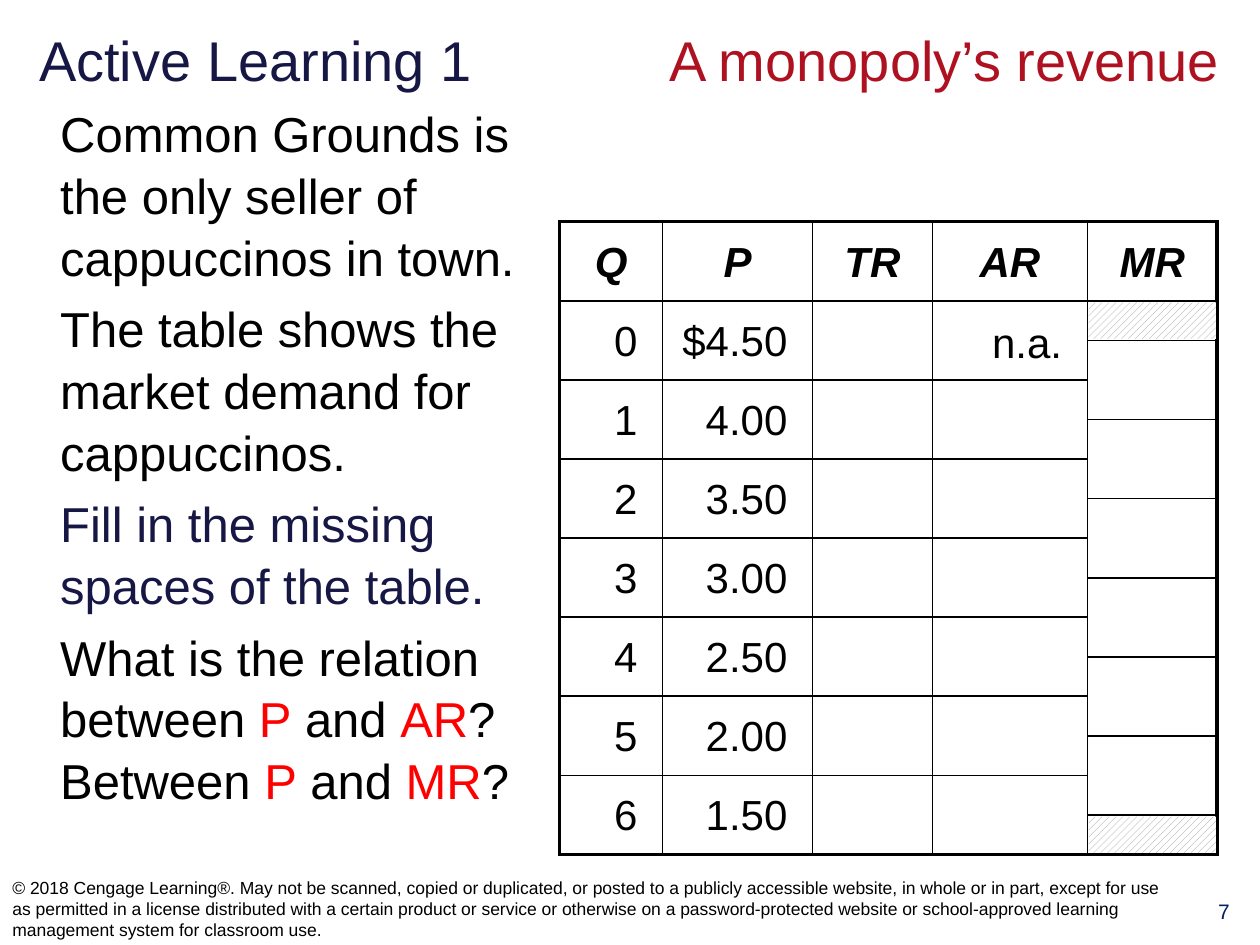
from dataclasses import dataclass
from itertools import accumulate
from typing import NamedTuple

from lxml.etree import SubElement
from pptx import Presentation
from pptx.dml.color import RGBColor
from pptx.enum.dml import MSO_PATTERN
from pptx.enum.shapes import MSO_SHAPE
from pptx.enum.text import MSO_ANCHOR as Anchor, PP_ALIGN as Align
from pptx.oxml.ns import qn
from pptx.util import Inches, Pt

WIDTH, HEIGHT = Inches(10), Inches(7.5)
FONT = "Arial"
BLACK, WHITE, NAVY, CRIMSON, RED = "000000", "FFFFFF", "171745", "AE1221", "FF0000"
DEEP_BLUE, GREY = "002060", "969696"
THIN, THICK = 1, 2.25

TABLE_LEFT, TABLE_TOP, ROW = 44.4, 23.47, 8.37
COLUMNS = [8.2, 11.9, 9.5, 12.3, 10.3]
EDGES = list(accumulate(COLUMNS, initial=TABLE_LEFT))
HEADINGS = ["Q", "P", "TR", "AR", "MR"]
PRICES = ["$4.50", "4.00", "3.50", "3.00", "2.50", "2.00", "1.50"]
ROWS = len(PRICES) + 1


class Area(NamedTuple):
    """Shares of the slide's size, in percent."""
    left: float
    top: float
    width: float
    height: float

    def lengths(self) -> tuple[int, int, int, int]:
        return (across(self.left), down(self.top), across(self.width), down(self.height))


class Span(NamedTuple):
    text: str
    color: str = BLACK


@dataclass
class Style:
    size: float
    align: Align = Align.LEFT
    bold: bool = False
    spacing: float = 1.0
    before: float = 0


@dataclass
class Block:
    area: Area
    paragraphs: list[list[Span]]
    style: Style
    anchor: Anchor = Anchor.TOP
    inset_left: float = 0.1
    inset_right: float = 0.1
    tabs: tuple[float, ...] = ()


HEADING = Style(24, Align.CENTER, bold=True, spacing=1.05)
NUMBER = Style(24, Align.RIGHT, spacing=1.05)

BLOCKS = [
    Block(Area(1.7, 1.47, 96.7, 9.6),
          [[Span("Active Learning 1\t\t", NAVY), Span("A monopoly’s revenue", CRIMSON)]],
          Style(32), Anchor.MIDDLE, inset_left=0.14, tabs=(40, 50)),
    Block(Area(3.8, 10, 40.6, 84),
          [[Span("Common Grounds is the only seller of cappuccinos in town.")],
           [Span("The table shows the market demand for cappuccinos.")],
           [Span("Fill in the missing spaces of the table.", NAVY)],
           [Span("What is the relation between "), Span("P", RED), Span(" and "),
            Span("AR", RED), Span("? Between "), Span("P", RED), Span(" and "),
            Span("MR", RED), Span("?")]],
          Style(28, spacing=1.05, before=5.6)),
    Block(Area(94.3, 94.4, 5.7, 5.47), [[Span("7", DEEP_BLUE)]], Style(12, Align.CENTER)),
    Block(Area(0, 92.27, 94.1, 7.73),
          [[Span("© 2018 Cengage Learning®. May not be scanned, copied or duplicated, or posted "
                 "to a publicly accessible website, in whole or in part, except for use as "
                 "permitted in a license distributed with a certain product or service or "
                 "otherwise on a password-protected website or school-approved learning "
                 "management system for classroom use.")]],
          Style(10), Anchor.MIDDLE),
]
NOT_APPLICABLE = Block(Area(EDGES[3], TABLE_TOP + ROW, COLUMNS[3], ROW),
                       [[Span("n.a.")]], NUMBER, Anchor.MIDDLE, inset_right=0.2)


def across(percent: float) -> int:
    return int(WIDTH * percent / 100)


def down(percent: float) -> int:
    return int(HEIGHT * percent / 100)


def rgb(color: str) -> RGBColor:
    return RGBColor.from_string(color)


def write(para, spans: list[Span], style: Style, first: bool = True,
          tabs: tuple[float, ...] = ()) -> None:
    para.alignment = style.align
    para.line_spacing = style.spacing
    para.space_before = Pt(0 if first else style.before)
    if tabs:
        tab_list = SubElement(para._p.get_or_add_pPr(), qn("a:tabLst"))
        for stop in tabs:
            SubElement(tab_list, qn("a:tab"), pos=str(across(stop)), algn="l")
    para.font.name = FONT
    para.font.size = Pt(style.size)
    para.font.bold = para.font.italic = style.bold
    for span in spans:
        run = para.add_run()
        run.text = span.text
        run.font.color.rgb = rgb(span.color)


def draw_block(page, block: Block) -> None:
    frame = page.shapes.add_textbox(*block.area.lengths()).text_frame
    frame.word_wrap = True
    frame.vertical_anchor = block.anchor
    frame.margin_left, frame.margin_right = Inches(block.inset_left), Inches(block.inset_right)
    for index, spans in enumerate(block.paragraphs):
        para = frame.add_paragraph() if index else frame.paragraphs[0]
        write(para, spans, block.style, index == 0, block.tabs)


def set_borders(cell, row: int, column: int) -> None:
    outer = {"L": column == 0, "R": column == len(COLUMNS) - 1,
             "T": row == 0, "B": row == ROWS - 1}
    properties = cell._tc.get_or_add_tcPr()
    for index, (side, is_outer) in enumerate(outer.items()):
        weight = Pt(THICK if is_outer else THIN)
        line = SubElement(properties, qn(f"a:ln{side}"), w=str(int(weight)))
        SubElement(SubElement(line, qn("a:solidFill")), qn("a:srgbClr"), val=BLACK)
        properties.insert(index, line)


def fill_cell(cell, row: int, column: int) -> None:
    cell.fill.background()
    set_borders(cell, row, column)
    cell.vertical_anchor = Anchor.MIDDLE
    para = cell.text_frame.paragraphs[0]
    if row == 0:
        write(para, [Span(HEADINGS[column])], HEADING)
    elif column < 2:
        cell.margin_right = Inches(0.2)
        text = PRICES[row - 1] if column else str(row - 1)
        write(para, [Span(text)], NUMBER)


def draw_table(page) -> None:
    area = Area(TABLE_LEFT, TABLE_TOP, sum(COLUMNS), ROW * ROWS)
    table = page.shapes.add_table(ROWS, len(COLUMNS), *area.lengths()).table
    table.first_row = table.horz_banding = False
    for column, width in zip(table.columns, COLUMNS):
        column.width = across(width)
    for row_index, row in enumerate(table.rows):
        row.height = down(ROW)
        for column_index, cell in enumerate(row.cells):
            fill_cell(cell, row_index, column_index)


def draw_box(page, area: Area, hatched: bool = False) -> None:
    box = page.shapes.add_shape(MSO_SHAPE.RECTANGLE, *area.lengths())
    box.shadow.inherit = False
    if hatched:
        box.fill.patterned()
        box.fill.pattern = MSO_PATTERN.WIDE_UPWARD_DIAGONAL
        box.fill.fore_color.rgb = rgb(GREY)
        box.fill.back_color.rgb = rgb(WHITE)
        box.line.fill.background()
    else:
        box.fill.solid()
        box.fill.fore_color.rgb = rgb(WHITE)
        box.line.color.rgb = rgb(BLACK)
        box.line.width = Pt(THIN)


def draw_marginal_column(page) -> None:
    left, width = EDGES[4], COLUMNS[4] - 0.1
    for step in range(len(PRICES) - 1):
        draw_box(page, Area(left, TABLE_TOP + (step + 1.5) * ROW, width, ROW))
    for start in (1.02, ROWS - 0.48):
        draw_box(page, Area(left + 0.1, TABLE_TOP + start * ROW, width - 0.1, ROW * 0.46), True)


def main() -> None:
    deck = Presentation()
    deck.slide_width, deck.slide_height = WIDTH, HEIGHT
    page = deck.slides.add_slide(deck.slide_layouts[6])
    for block in BLOCKS:
        draw_block(page, block)
    draw_table(page)
    draw_marginal_column(page)
    draw_block(page, NOT_APPLICABLE)
    deck.save("out.pptx")


if __name__ == "__main__":
    main()
